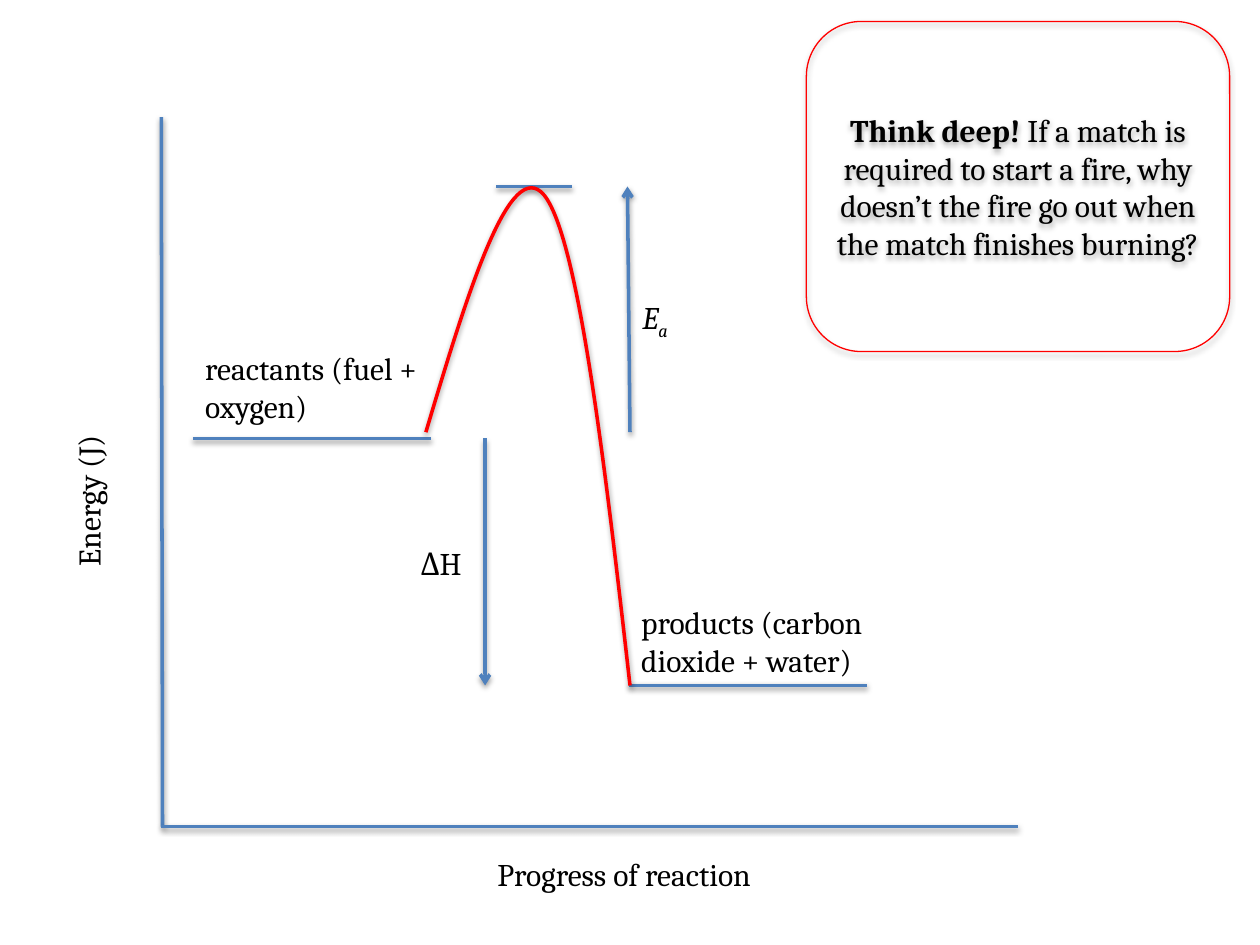
from lxml.etree import SubElement
from pptx import Presentation
from pptx.dml.color import RGBColor
from pptx.enum.shapes import MSO_CONNECTOR, MSO_SHAPE
from pptx.enum.text import MSO_ANCHOR, MSO_AUTO_SIZE, PP_ALIGN
from pptx.oxml import parse_xml
from pptx.oxml.ns import nsdecls, qn
from pptx.util import Inches, Pt

COLORS = {"blue": "4F81BD", "red": "FF0000", "text": "000000"}
FONT, SIZE = "Cambria", 18

LEFT, BASE = 1.28, 6.56
REACTANTS, PRODUCTS, PEAK = 3.48, 5.44, 1.48
LINES = [
    ((LEFT, 0.93), (1.29, BASE), False),
    ((LEFT, BASE), (8.08, BASE), False),
    ((1.53, REACTANTS), (3.42, REACTANTS), False),
    ((4.99, PRODUCTS), (6.88, PRODUCTS), False),
    ((3.94, PEAK), (4.54, PEAK), False),
    ((3.85, REACTANTS), (3.85, PRODUCTS), True),
    ((5, 3.43), (4.98, PEAK), True),
]
LABELS = [
    ("Progress of reaction", (3.85, 6.74, 3.74, 0.4), 0),
    ("reactants (fuel + oxygen)", (1.53, 2.72, 2.11, 0.71), 0),
    ("products (carbon dioxide + water)", (4.99, 4.74, 2.11, 0.71), 0),
    ("ΔH", (3.24, 4.27, 2.06, 0.4), 0),
    ("Energy (J)", (-1.17, 2.52, 3.74, 0.4), 270),
]
EA_BOX = (5, 2.32, 0.46, 0.4)
CURVE = [(3.38, 3.43), (3.71, 2.32), (4.05, 1.22), (4.32, 1.55),
         (4.59, 1.89), (4.8, 3.67), (5, PRODUCTS)]
CALLOUT_BOX = (6.4, 0.17, 3.36, 2.62)
CALLOUT = ("Think deep! ", "If a match is required to start a fire, why "
           "doesn’t the fire go out when the match finishes burning?")


def color(name):
    return RGBColor.from_string(COLORS[name])


def outline(sp, name, width, opacity=38, distance=1.6):
    sp.line.color.rgb = color(name)
    sp.line.width = Pt(width)
    sp._element.spPr.append(parse_xml(
        f'<a:effectLst {nsdecls("a")}><a:outerShdw blurRad="{Pt(3.1)}" '
        f'dist="{Pt(distance)}" dir="5400000" rotWithShape="0">'
        f'<a:srgbClr val="000000"><a:alpha val="{opacity * 1000}"/></a:srgbClr>'
        '</a:outerShdw></a:effectLst>'))


def style(p):
    p.font.name, p.font.size = FONT, Pt(SIZE)
    p.font.color.rgb = color("text")


def add_line(shapes, start, end, arrow):
    line = shapes.add_connector(MSO_CONNECTOR.STRAIGHT, *map(Inches, start + end))
    outline(line, "blue", 2)
    if arrow:
        ln = line._element.spPr.find(qn("a:ln"))
        SubElement(ln, qn("a:tailEnd"), type="arrow")


def add_label(shapes, text, box, rotation=0, wrap=True):
    sp = shapes.add_textbox(*map(Inches, box))
    sp.rotation = rotation
    tf = sp.text_frame
    tf.word_wrap = wrap
    tf.auto_size = MSO_AUTO_SIZE.SHAPE_TO_FIT_TEXT
    p = tf.paragraphs[0]
    p.add_run().text = text
    style(p)
    return p


def add_curve(shapes, points):
    start, *rest = [(Inches(x), Inches(y)) for x, y in points]
    builder = shapes.build_freeform(*start)
    builder.add_line_segments(rest, close=False)
    sp = builder.convert_to_shape()
    sp.fill.background()
    outline(sp, "red", 2)
    path = sp._element.find(".//" + qn("a:path"))
    segments = path.findall(qn("a:lnTo"))
    for i in range(0, len(segments), 3):
        bezier = SubElement(path, qn("a:cubicBezTo"))
        for segment in segments[i:i + 3]:
            bezier.append(segment[0])
            path.remove(segment)


def add_callout(shapes):
    sp = shapes.add_shape(MSO_SHAPE.ROUNDED_RECTANGLE, *map(Inches, CALLOUT_BOX))
    sp.fill.background()
    outline(sp, "red", 0.75, opacity=35, distance=1.8)
    tf = sp.text_frame
    tf.word_wrap = True
    tf.vertical_anchor = MSO_ANCHOR.MIDDLE
    p = tf.paragraphs[0]
    p.alignment = PP_ALIGN.CENTER
    style(p)
    for text, bold in zip(CALLOUT, (True, False)):
        r = p.add_run()
        r.text = text
        r.font.bold = bold


def main():
    prs = Presentation()
    prs.slide_width, prs.slide_height = Inches(10), Inches(7.5)
    shapes = prs.slides.add_slide(prs.slide_layouts[6]).shapes
    for line in LINES:
        add_line(shapes, *line)
    for label in LABELS:
        add_label(shapes, *label)
    p = add_label(shapes, "E", EA_BOX, wrap=False)
    p.font.italic = True
    r = p.add_run()
    r.text = "a"
    r.font._element.set("baseline", "-25000")
    add_curve(shapes, CURVE)
    add_callout(shapes)
    prs.save("out.pptx")


if __name__ == "__main__":
    main()
